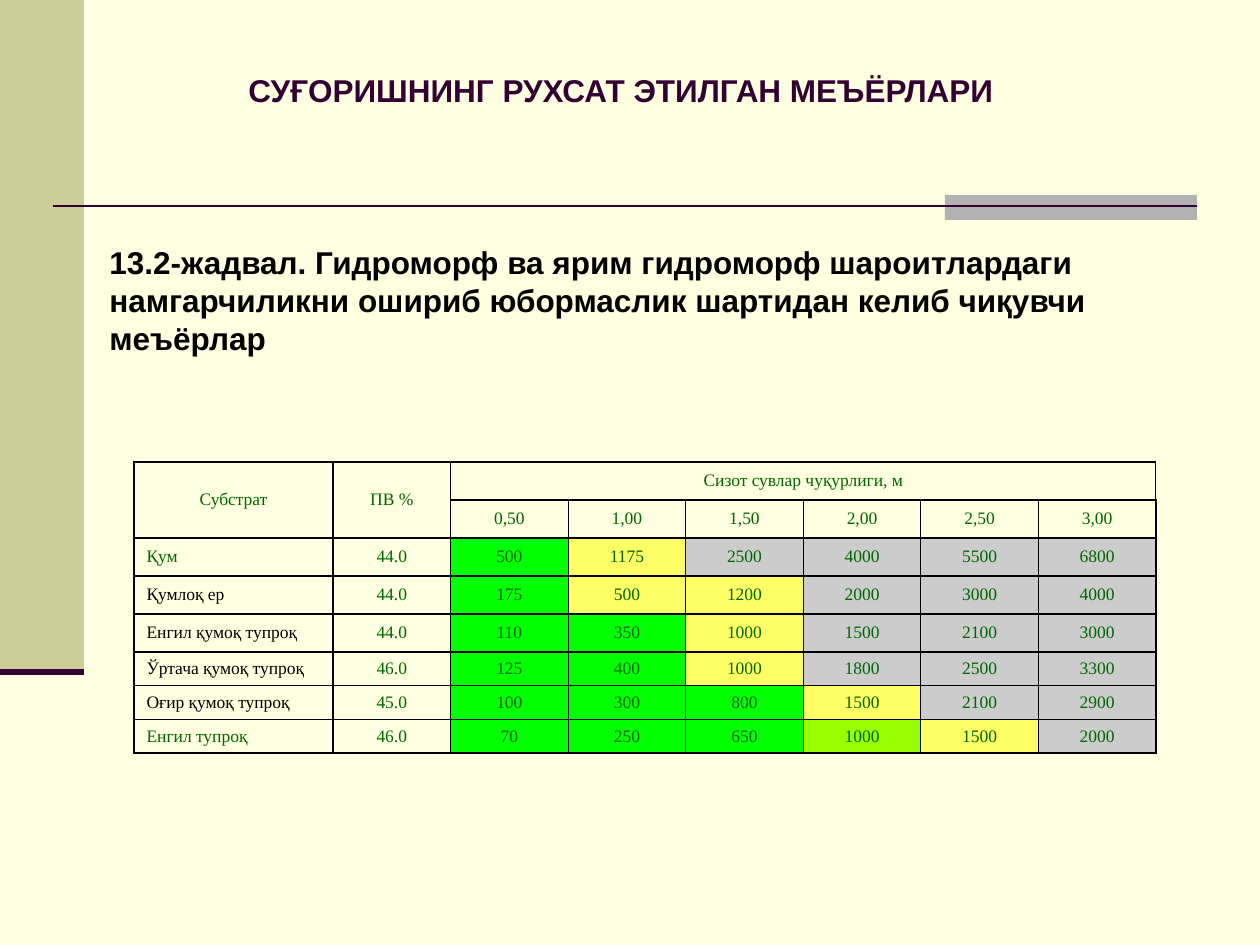
from lxml import etree
from pptx import Presentation
from pptx.dml.color import RGBColor
from pptx.enum.shapes import MSO_CONNECTOR, MSO_SHAPE
from pptx.enum.text import MSO_ANCHOR, PP_ALIGN
from pptx.oxml.ns import qn
from pptx.util import Pt

PX = 914400 / 126
LEFT, CENTER = PP_ALIGN.LEFT, PP_ALIGN.CENTER
MIDDLE, TOP = MSO_ANCHOR.MIDDLE, MSO_ANCHOR.TOP
RECT, STRAIGHT = MSO_SHAPE.RECTANGLE, MSO_CONNECTOR.STRAIGHT

PLUM, BLACK, GREEN = "330033", "000000", "006600"
FILLS = {"g": "00FF00", "l": "99FF00", "y": "FFFF66", "s": "CCCCCC"}

TITLE = "СУҒОРИШНИНГ РУХСАТ ЭТИЛГАН МЕЪЁРЛАРИ"
CAPTION = ("13.2-жадвал. Гидроморф ва ярим гидроморф шароитлардаги "
           "намгарчиликни ошириб юбормаслик шартидан келиб чиқувчи меъёрлар")
HEADER = [["Субстрат", "ПВ %", "Сизот сувлар чуқурлиги, м"],
          ["", "", "0,50", "1,00", "1,50", "2,00", "2,50", "3,00"]]
# Name, name colour, water capacity, norms by depth, fill key of each norm
SOILS = [
    ("Қум", GREEN, "44.0", [500, 1175, 2500, 4000, 5500, 6800], "gyssss"),
    ("Қумлоқ ер", BLACK, "44.0", [175, 500, 1200, 2000, 3000, 4000], "gyysss"),
    ("Енгил қумоқ тупроқ", BLACK, "44.0", [110, 350, 1000, 1500, 2100, 3000], "ggysss"),
    ("Ўртача қумоқ тупроқ", BLACK, "46.0", [125, 400, 1000, 1800, 2500, 3300], "ggysss"),
    ("Оғир қумоқ тупроқ", BLACK, "45.0", [100, 300, 800, 1500, 2100, 2900], "gggyss"),
    ("Енгил тупроқ", GREEN, "46.0", [70, 250, 650, 1000, 1500, 2000], "ggglys"),
]
ROW_HEIGHTS = [38] * 5 + [32] * 3
COLS = 8


def px(n):
    return round(n * PX)


def rgb(color):
    return RGBColor.from_string(color)


def add_rect(s, x, y, w, h, color):
    sp = s.shapes.add_shape(RECT, px(x), px(y), px(w), px(h))
    sp.shadow.inherit = False
    sp.fill.solid()
    sp.fill.fore_color.rgb = rgb(color)
    sp.line.fill.background()


def add_rule(s, x, y, w, width):
    line = s.shapes.add_connector(STRAIGHT, px(x), px(y), px(x + w), px(y))
    line.line.color.rgb = rgb(PLUM)
    line.line.width = Pt(width)
    etree.SubElement(line._element.spPr, qn("a:effectLst"))


def write(tf, text, font, size, color, bold=False, align=LEFT, margin=0, indent=0):
    p = tf.paragraphs[0]
    p.alignment = align
    pPr = p._p.get_or_add_pPr()
    pPr.set("marL", str(px(margin)))
    pPr.set("indent", str(px(indent)))
    r = p.add_run()
    r.text = text
    r.font.name = font
    r.font.size = Pt(size)
    r.font.bold = bold
    r.font.color.rgb = rgb(color)


def add_heading(s, x, y, w, h, text, color, anchor, margin=0):
    tf = s.shapes.add_textbox(px(x), px(y), px(w), px(h)).text_frame
    tf.word_wrap = True
    tf.vertical_anchor = anchor
    write(tf, text, "Arial", 18, color, bold=True, margin=margin)


def set_borders(cell, row, col):
    """Heavier lines surround the header, the first and the last column."""
    outer = col in (0, COLS - 1)
    weights = {
        "L": 1 if outer or col == 1 or (row < 2 and col == 2) else 0.75,
        "R": 1 if outer or col == COLS - 2 or (row < 2 and col == 1) else 0.75,
        "T": 1 if outer or row == 0 else 0.75,
        "B": 1 if outer else 0.75,
    }
    tcPr = cell._tc.get_or_add_tcPr()
    for i, (side, weight) in enumerate(weights.items()):
        ln = etree.Element(qn("a:ln" + side), w=str(Pt(weight)))
        fill = etree.SubElement(ln, qn("a:solidFill"))
        etree.SubElement(fill, qn("a:srgbClr"), val=BLACK)
        tcPr.insert(i, ln)


def fill_cell(cell, text, color=GREEN, align=CENTER, fill=None):
    cell.vertical_anchor = MIDDLE
    if fill:
        cell.fill.solid()
        cell.fill.fore_color.rgb = rgb(fill)
    else:
        cell.fill.background()
    if text:
        write(cell.text_frame, text, "Times New Roman", 10, color,
              align=align, margin=48, indent=-48)


def add_norms_table(s, x, y, w, first_col):
    h = sum(ROW_HEIGHTS)
    table = s.shapes.add_table(len(ROW_HEIGHTS), COLS, px(x), px(y), px(w), px(h)).table
    for c, column in enumerate(table.columns):
        column.width = px(first_col if c == 0 else (w - first_col) / (COLS - 1))
    for row, height in zip(table.rows, ROW_HEIGHTS):
        row.height = px(height)
    for r in range(len(ROW_HEIGHTS)):
        for c in range(COLS):
            set_borders(table.cell(r, c), r, c)

    # Header
    for c in (0, 1):
        table.cell(0, c).merge(table.cell(1, c))
    table.cell(0, 2).merge(table.cell(0, COLS - 1))
    for r, texts in enumerate(HEADER):
        for c, text in enumerate(texts):
            fill_cell(table.cell(r, c), text)

    # Soils
    for r, (name, color, capacity, norms, keys) in enumerate(SOILS, len(HEADER)):
        fill_cell(table.cell(r, 0), name, color, LEFT)
        fill_cell(table.cell(r, 1), capacity)
        for c, (norm, key) in enumerate(zip(norms, keys), 2):
            fill_cell(table.cell(r, c), str(norm), fill=FILLS[key])


def add_frame(s, x, y):
    """Side band, grey tab and the two rules."""
    add_rect(s, x, y, 84, 672, "CCCC99")
    add_rect(s, x + 945, y + 195, 252, 25, "B2B2B2")
    add_rule(s, x + 53, y + 206, 1144, 1.5)
    add_rule(s, x, y + 672, 84, 3.5)


def main():
    prs = Presentation()
    prs.slide_width, prs.slide_height = px(1260), px(945)
    s = prs.slides.add_slide(prs.slide_layouts[6])
    s.background.fill.solid()
    s.background.fill.fore_color.rgb = rgb("FFFFE1")

    add_frame(s, 0, 0)
    add_heading(s, 236, 56, 916, 67, TITLE, PLUM, MIDDLE)
    add_norms_table(s, 134, 462, 1022, 199)
    add_heading(s, 34, 237, 1131, 127, CAPTION, BLACK, TOP, margin=63)
    prs.save("out.pptx")


if __name__ == "__main__":
    main()
